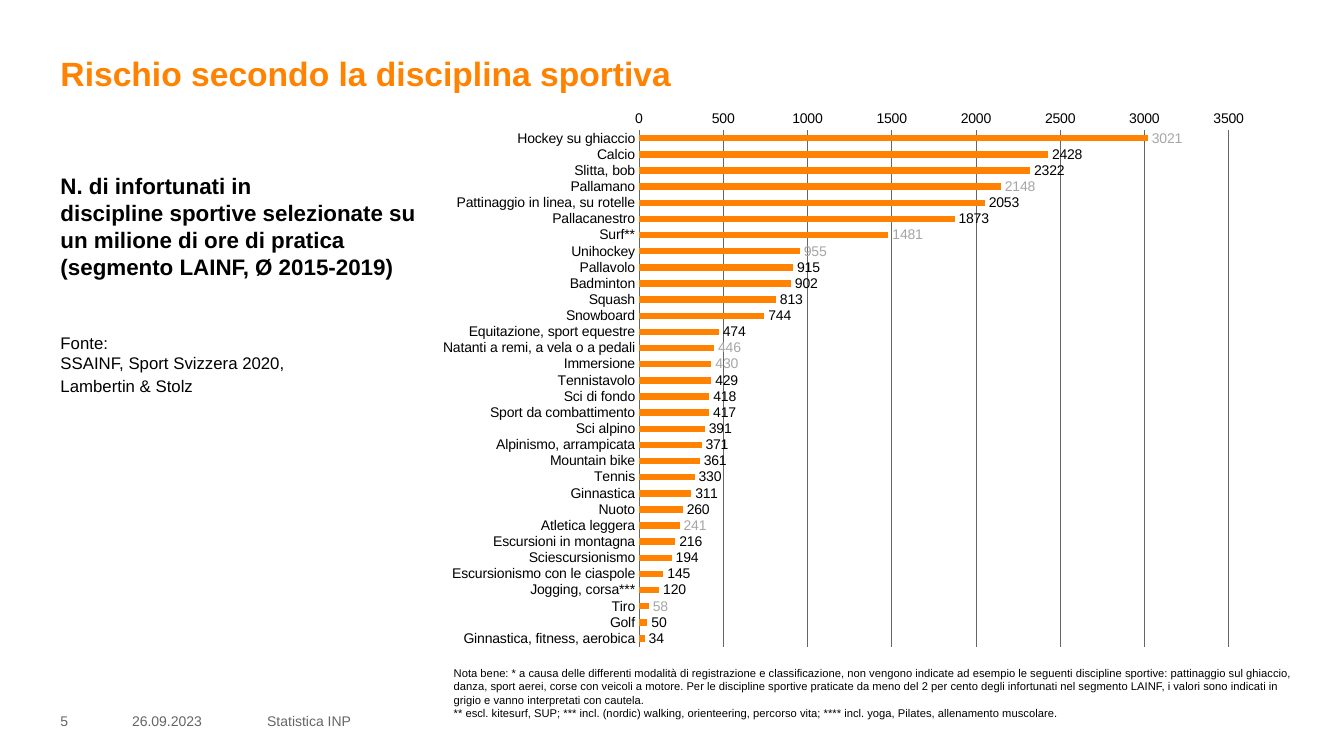
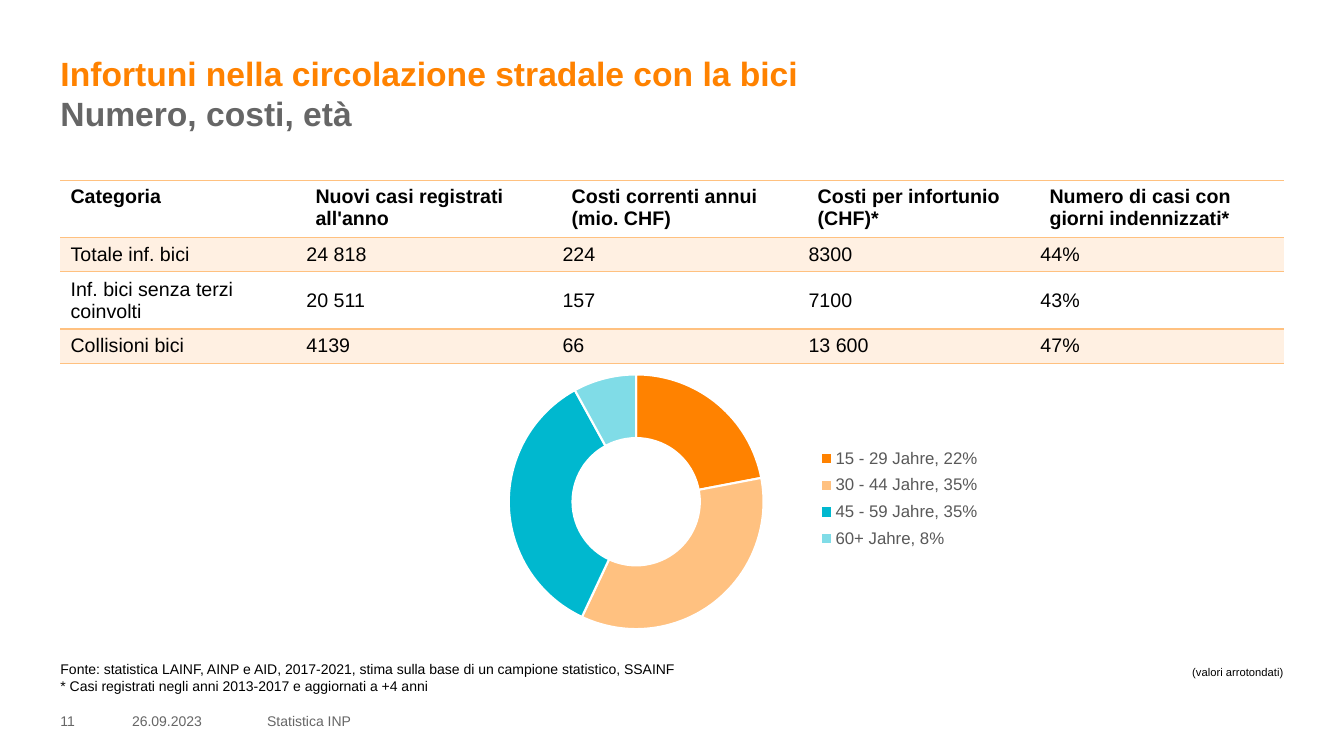
from copy import deepcopy
from dataclasses import dataclass

from lxml import etree
from pptx import Presentation
from pptx import util as u
from pptx.chart.data import CategoryChartData
from pptx.dml.color import RGBColor
from pptx.enum import chart as ch
from pptx.enum import text as tx
from pptx.oxml import parse_xml
from pptx.oxml.ns import nsdecls, qn


@dataclass(frozen=True)
class Theme:
    font: str = "Arial"
    orange: str = "FF8200"
    peach: str = "FFC180"
    tint: str = "FFF0E2"
    teal: str = "00B8CF"
    aqua: str = "80DCE7"
    grey: str = "666666"
    legend: str = "595959"
    pale: str = "A6A6A6"
    black: str = "000000"
    white: str = "FFFFFF"
    title: int = 24
    lead: int = 16
    table: int = 14
    body: int = 12
    small: int = 10
    note: int = 8


T = Theme()
LEFT, WIDTH = 0.6, 12.13
NO_STYLE = "{2D5ABB26-0587-4C30-8999-92F81FD0307C}"

SPORTS = [
    ("Hockey su ghiaccio", 3021), ("Calcio", 2428), ("Slitta, bob", 2322),
    ("Pallamano", 2148), ("Pattinaggio in linea, su rotelle", 2053),
    ("Pallacanestro", 1873), ("Surf**", 1481), ("Unihockey", 955),
    ("Pallavolo", 915), ("Badminton", 902), ("Squash", 813),
    ("Snowboard", 744), ("Equitazione, sport equestre", 474),
    ("Natanti a remi, a vela o a pedali", 446), ("Immersione", 430),
    ("Tennistavolo", 429), ("Sci di fondo", 418),
    ("Sport da combattimento", 417), ("Sci alpino", 391),
    ("Alpinismo, arrampicata", 371), ("Mountain bike", 361),
    ("Tennis", 330), ("Ginnastica", 311), ("Nuoto", 260),
    ("Atletica leggera", 241), ("Escursioni in montagna", 216),
    ("Sciescursionismo", 194), ("Escursionismo con le ciaspole", 145),
    ("Jogging, corsa***", 120), ("Tiro", 58), ("Golf", 50),
    ("Ginnastica, fitness, aerobica", 34),
]
UNCERTAIN = {"Hockey su ghiaccio", "Pallamano", "Surf**", "Unihockey",
             "Natanti a remi, a vela o a pedali", "Immersione",
             "Atletica leggera", "Tiro"}
AGES = [("15 - 29 Jahre, 22%", 22, T.orange), ("30 - 44 Jahre, 35%", 35, T.peach),
        ("45 - 59 Jahre, 35%", 35, T.teal), ("60+ Jahre, 8%", 8, T.aqua)]
COSTS = [
    ["Categoria", "Nuovi casi registrati all'anno", "Costi correnti annui (mio. CHF)",
     "Costi per infortunio (CHF)*", "Numero di casi con giorni indennizzati*"],
    ["Totale inf. bici", "24 818", "224", "8300", "44%"],
    ["Inf. bici senza terzi coinvolti", "20 511", "157", "7100", "43%"],
    ["Collisioni bici", "4139", "66", "13 600", "47%"],
]


def rgb(value):
    return RGBColor.from_string(value)


def set_font(font, size, color=T.black, bold=False):
    font.name, font.size, font.bold = T.font, u.Pt(size), bold
    font.color.rgb = rgb(color)


def write(frame, paragraphs, *, size=T.body, color=T.black, bold=False,
          align=tx.PP_ALIGN.LEFT, anchor=tx.MSO_ANCHOR.TOP):
    """Fill a frame; a paragraph is a string or (string, overrides), \\v breaks a line."""
    frame.word_wrap = True
    frame.vertical_anchor = anchor
    frame.margin_left = frame.margin_top = 0
    frame.margin_right = frame.margin_bottom = 0
    for index, entry in enumerate(paragraphs):
        words, own = (entry, {}) if isinstance(entry, str) else entry
        para = frame.paragraphs[0] if index == 0 else frame.add_paragraph()
        para.text = words
        para.alignment = align
        para.line_spacing = own.get("spacing", 1.0)
        para.space_before = u.Pt(own.get("before", 0))
        for run in para.runs:
            set_font(run.font, own.get("size", size), own.get("color", color),
                     own.get("bold", bold))
        for line_break in para._p.findall(qn("a:br")):
            line_break.insert(0, deepcopy(para.runs[0]._r.rPr))


def add_text(slide, box, *paragraphs, **style):
    frame = slide.shapes.add_textbox(*map(u.Inches, box)).text_frame
    write(frame, paragraphs, **style)


def add_slide(prs, number, *title_lines):
    """Add a slide with its title and the shared footer."""
    slide = prs.slides.add_slide(prs.slide_layouts[5])
    title = slide.shapes.title
    title.left, title.top, title.width, title.height = map(
        u.Inches, (LEFT, 0.52, WIDTH, 0.94))
    write(title.text_frame, title_lines, size=T.title, color=T.orange, bold=True)
    title.text_frame.auto_size = tx.MSO_AUTO_SIZE.NONE
    for left, width, words in ((LEFT, 0.55, str(number)), (1.31, 1.18, "26.09.2023"),
                               (2.65, 8.58, "Statistica INP")):
        add_text(slide, (left, 7.05, width, 0.2), words, size=T.small,
                 color=T.grey, anchor=tx.MSO_ANCHOR.MIDDLE)
    return slide


def set_layout(element, box, inner=False):
    """Place a plot area or legend by fractions of the chart."""
    old = element.find(qn("c:layout"))
    if old is not None:
        element.remove(old)
    parts = '<c:layoutTarget val="inner"/>' if inner else ""
    parts += '<c:xMode val="edge"/><c:yMode val="edge"/>'
    parts += "".join(f'<c:{key} val="{value}"/>' for key, value in zip("xywh", box))
    layout = parse_xml(f'<c:layout {nsdecls("c")}><c:manualLayout>{parts}'
                       '</c:manualLayout></c:layout>')
    position = element.find(qn("c:legendPos"))
    element.insert(0 if position is None else 1, layout)


def add_chart(slide, box, kind, categories, values, plot_box):
    data = CategoryChartData(number_format="0")
    data.categories = categories
    data.add_series("Series 1", values)
    chart = slide.shapes.add_chart(kind, *map(u.Inches, box), data).chart
    chart.has_title = chart.has_legend = False
    set_font(chart.font, T.small)
    set_layout(chart._chartSpace.chart.plotArea, plot_box, inner=True)
    return chart


def risk_chart(slide, box):
    names, values = zip(*SPORTS)
    chart = add_chart(slide, box, ch.XL_CHART_TYPE.BAR_CLUSTERED, names, values,
                      (0.255, 0.053, 0.635, 0.93))
    plot = chart.plots[0]
    plot.gap_width, plot.vary_by_categories = 150, False
    bars = plot.series[0]
    bars.format.fill.solid()
    bars.format.fill.fore_color.rgb = rgb(T.orange)

    labels = bars.data_labels
    labels.show_value = True
    labels.number_format, labels.number_format_is_linked = "0", False
    labels.position = ch.XL_LABEL_POSITION.OUTSIDE_END
    set_font(labels.font, T.small)
    for index, name in enumerate(names):
        if name in UNCERTAIN:
            label = bars.points[index].data_label
            set_font(label.font, T.small, T.pale)
            label.position = ch.XL_LABEL_POSITION.OUTSIDE_END

    sports, risk = chart.category_axis, chart.value_axis
    for axis in (sports, risk):
        axis.major_tick_mark = axis.minor_tick_mark = ch.XL_TICK_MARK.NONE
        set_font(axis.tick_labels.font, T.small)
    sports.reverse_order = True
    sports.format.line.color.rgb = rgb(T.grey)
    sports.format.line.width = u.Pt(0.75)
    risk.minimum_scale, risk.maximum_scale, risk.major_unit = 0, 3500, 500
    risk.format.line.fill.background()
    risk.major_gridlines.format.line.color.rgb = rgb(T.grey)
    risk.major_gridlines.format.line.width = u.Pt(0.5)


def age_chart(slide, box):
    names, values, colors = zip(*AGES)
    chart = add_chart(slide, box, ch.XL_CHART_TYPE.DOUGHNUT, names, values,
                      (0.33, 0.04, 0.34, 0.81))
    plot = chart.plots[0]
    plot.vary_by_categories = True
    plot._element.find(qn("c:holeSize")).set("val", "55")
    for index, color in enumerate(colors):
        look = plot.series[0].points[index].format
        look.fill.solid()
        look.fill.fore_color.rgb = rgb(color)
        look.line.color.rgb = rgb(T.white)
        look.line.width = u.Pt(1.5)
    chart.has_legend = True
    legend = chart.legend
    legend.position = ch.XL_LEGEND_POSITION.RIGHT
    legend.include_in_layout = False
    set_font(legend.font, T.body, T.legend)
    set_layout(legend._element, (0.73, 0.25, 0.21, 0.37))


def rule_cell(cell):
    """Draw the rules above and below a cell."""
    for index, side in enumerate(("lnT", "lnB")):
        line = etree.Element(qn(f"a:{side}"), w=str(u.Pt(1)))
        fill = etree.SubElement(line, qn("a:solidFill"))
        etree.SubElement(fill, qn("a:srgbClr"), val=T.peach)
        cell._tc.get_or_add_tcPr().insert(index, line)


def cost_table(slide, box):
    table = slide.shapes.add_table(len(COSTS), len(COSTS[0]),
                                   *map(u.Inches, box)).table
    table.first_row = table.horz_banding = False
    table._tbl.tblPr.find(qn("a:tableStyleId")).text = NO_STYLE
    for column, width in zip(table.columns, (2.43, 2.54, 2.44, 2.3, 2.43)):
        column.width = u.Inches(width)
    for row in table.rows:
        row.height = u.Inches(0.34)
    for r, line in enumerate(COSTS):
        for c, words in enumerate(line):
            cell = table.cell(r, c)
            roomy = r == 0 or c == 0
            write(cell.text_frame, [words], size=T.table, bold=r == 0)
            cell.vertical_anchor = tx.MSO_ANCHOR.MIDDLE if r else tx.MSO_ANCHOR.TOP
            cell.margin_left = cell.margin_right = u.Inches(0.1 if roomy else 0.01)
            cell.margin_top = cell.margin_bottom = u.Inches(0.05 if roomy else 0.01)
            cell.fill.solid()
            cell.fill.fore_color.rgb = rgb(T.tint if r % 2 else T.white)
            rule_cell(cell)


def risk_slide(prs):
    slide = add_slide(prs, 5, "Rischio secondo la disciplina sportiva")
    add_text(slide, (LEFT, 1.71, 5.75, 2.3),
             ("N. di infortunati in\vdiscipline sportive selezionate su\v"
              "un milione di ore di pratica\v(segmento LAINF, Ø 2015-2019)",
              {"size": T.lead, "bold": True}),
             ("Fonte:\vSSAINF, Sport Svizzera 2020,", {"before": 38}),
             ("Lambertin & Stolz", {"spacing": u.Pt(16)}))
    risk_chart(slide, (3.99, 1, 9.21, 5.51))
    add_text(slide, (4.5, 6.61, 8.46, 0.54),
             "Nota bene: * a causa delle differenti modalità di registrazione e "
             "classificazione, non vengono indicate ad esempio le seguenti discipline "
             "sportive: pattinaggio sul ghiaccio, danza, sport aerei, corse con veicoli "
             "a motore. Per le discipline sportive praticate da meno del 2 per cento "
             "degli infortunati nel segmento LAINF, i valori sono indicati in grigio e "
             "vanno interpretati con cautela.\v** escl. kitesurf, SUP; *** incl. "
             "(nordic) walking, orienteering, percorso vita; **** incl. yoga, Pilates, "
             "allenamento muscolare.", size=T.note)


def bike_slide(prs):
    slide = add_slide(prs, 11, "Infortuni nella circolazione stradale con la bici",
                      ("Numero, costi, età", {"color": T.grey}))
    cost_table(slide, (LEFT, 1.79, WIDTH, 1.36))
    age_chart(slide, (2.41, 3.59, 7.8, 3.12))
    add_text(slide, (LEFT, 6.55, 8.43, 0.43),
             "Fonte: statistica LAINF, AINP e AID, 2017-2021, stima sulla base di un "
             "campione statistico, SSAINF",
             "* Casi registrati negli anni 2013-2017 e aggiornati a +4 anni",
             size=T.small)
    add_text(slide, (11.61, 6.6, 1.12, 0.2), "(valori arrotondati)",
             size=T.note, align=tx.PP_ALIGN.RIGHT)


def main():
    prs = Presentation()
    prs.slide_width, prs.slide_height = u.Inches(13.33), u.Inches(7.5)
    risk_slide(prs)
    bike_slide(prs)
    prs.save("out.pptx")


if __name__ == "__main__":
    main()
